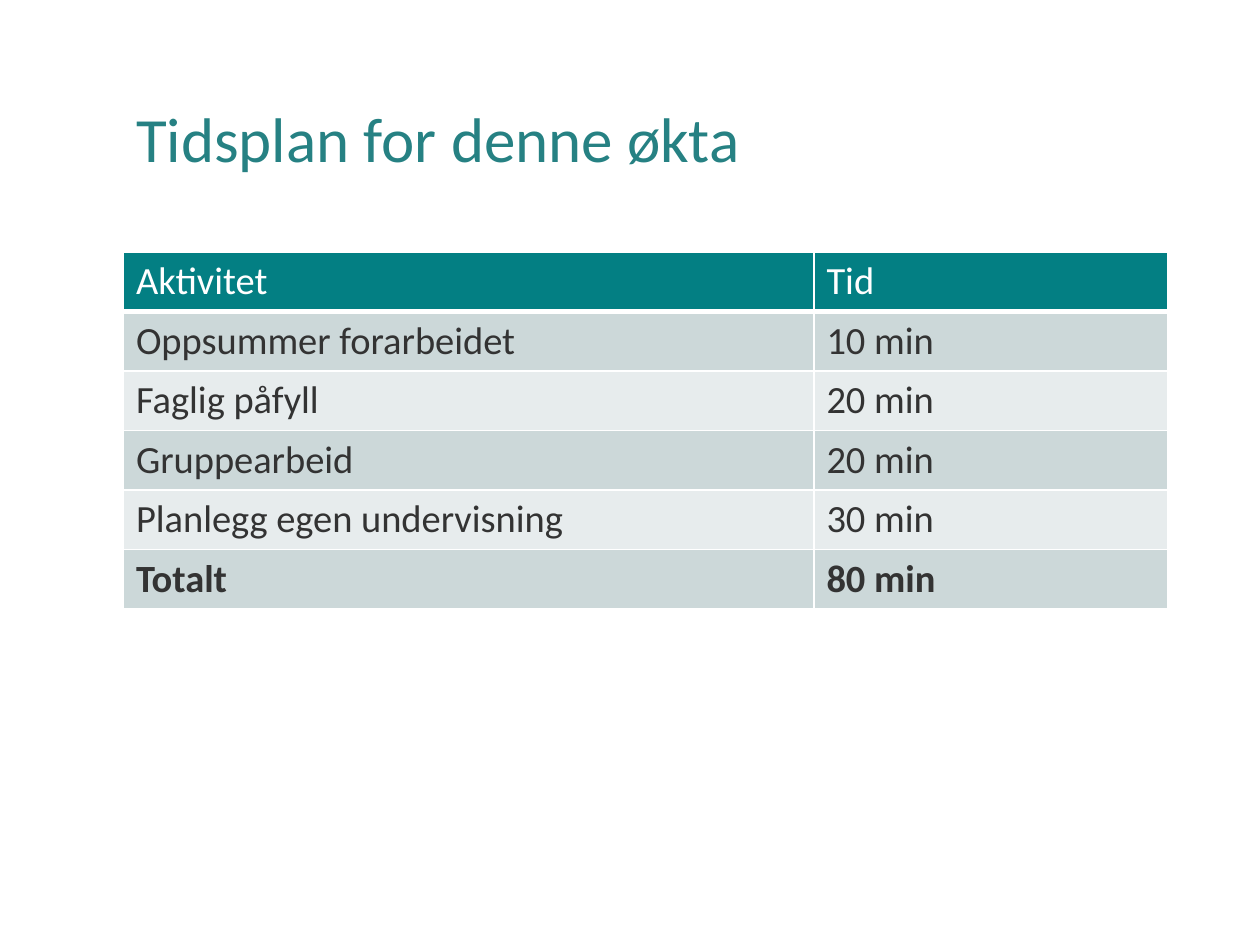
from lxml import etree
from pptx import Presentation
from pptx import util as u
from pptx.dml.color import RGBColor
from pptx.enum import text
from pptx.oxml import ns

FONT = "Calibri"
TITLE_TEAL = RGBColor(0x26, 0x81, 0x83)
HEADER_TEAL = RGBColor(0x03, 0x7F, 0x83)
WHITE = RGBColor(0xFF, 0xFF, 0xFF)
INK = RGBColor(0x33, 0x33, 0x33)
BANDS = [RGBColor(0xE7, 0xEC, 0xED), RGBColor(0xCC, 0xD8, 0xD9)]

SCHEDULE = [
    ("Aktivitet", "Tid"),
    ("Oppsummer forarbeidet", "10 min"),
    ("Faglig påfyll", "20 min"),
    ("Gruppearbeid", "20 min"),
    ("Planlegg egen undervisning", "30 min"),
    ("Totalt", "80 min"),
]
COLUMN_WIDTHS = [5.48, 2.81]
ROW_HEIGHT = 0.47
LEFT = 0.98
WIDTH = sum(COLUMN_WIDTHS)


def write_text(frame, words, *, size, color, bold=False, spacing=None):
    para = frame.paragraphs[0]
    para.alignment = text.PP_ALIGN.LEFT
    if spacing:
        para.line_spacing = spacing
    span = para.add_run()
    span.text = words
    span.font.name = FONT
    span.font.size = u.Pt(size)
    span.font.bold = bold
    span.font.color.rgb = color


def add_title(page, words):
    box = page.shapes.title
    box.left, box.top = u.Inches(LEFT), u.Inches(0.4)
    box.width, box.height = u.Inches(WIDTH), u.Inches(1.45)
    box.text_frame.vertical_anchor = text.MSO_ANCHOR.MIDDLE
    write_text(box.text_frame, words, size=36, color=TITLE_TEAL, spacing=0.9)


def set_borders(cell, **widths):
    properties = cell._tc.get_or_add_tcPr()
    for index, (side, points) in enumerate(widths.items()):
        line = etree.Element(ns.qn(f"a:ln{side}"), w=str(u.Pt(points)))
        fill = etree.SubElement(line, ns.qn("a:solidFill"))
        etree.SubElement(fill, ns.qn("a:srgbClr"), val=str(WHITE))
        properties.insert(index, line)


def add_schedule(page, rows):
    frame = page.shapes.add_table(
        len(rows), len(COLUMN_WIDTHS), u.Inches(LEFT), u.Inches(2),
        u.Inches(WIDTH), u.Inches(ROW_HEIGHT * len(rows)))
    table = frame.table
    for column, width in zip(table.columns, COLUMN_WIDTHS):
        column.width = u.Inches(width)
    for index, values in enumerate(rows):
        header = index == 0
        total = index == len(rows) - 1
        table.rows[index].height = u.Inches(ROW_HEIGHT)
        for cell, words in zip(table.rows[index].cells, values):
            cell.fill.solid()
            cell.fill.fore_color.rgb = HEADER_TEAL if header else BANDS[index % 2]
            set_borders(cell, L=1, R=1, T=3 if index == 1 else 1, B=3 if header else 1)
            write_text(cell.text_frame, words, size=22,
                       color=WHITE if header else INK, bold=total)


def main():
    deck = Presentation()
    deck.slide_width, deck.slide_height = u.Inches(10), u.Inches(7.5)
    page = deck.slides.add_slide(deck.slide_layouts[5])
    add_title(page, "Tidsplan for denne økta")
    add_schedule(page, SCHEDULE)
    deck.save("out.pptx")


if __name__ == "__main__":
    main()
